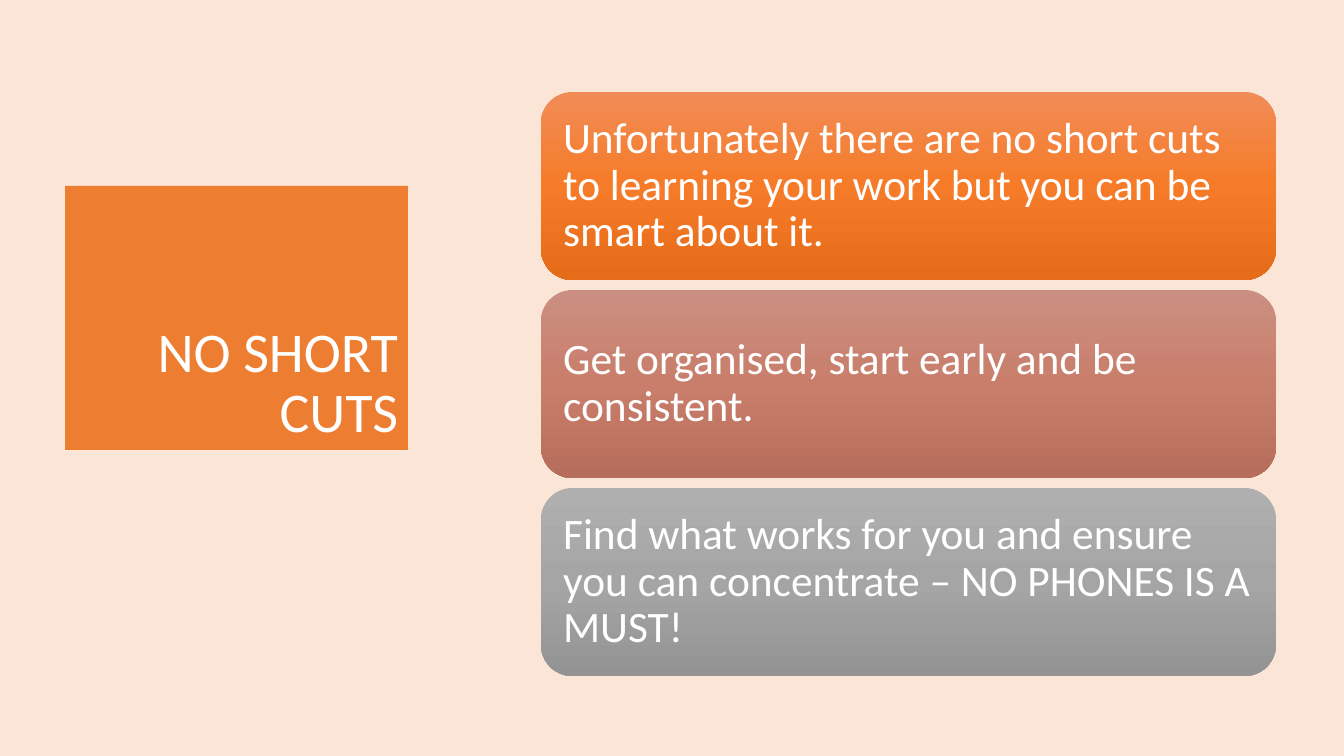
from copy import deepcopy

from pptx import Presentation
from pptx.dml.color import RGBColor
from pptx.enum.shapes import MSO_SHAPE
from pptx.enum.text import MSO_ANCHOR, PP_ALIGN
from pptx.util import Pt

PX = 914400 / 100.8
WHITE, ORANGE, PEACH = "FFFFFF", "ED7D31", "FBE5D6"

TITLE = "NO SHORT CUTS"
TIPS = [
    ("Unfortunately there are no short cuts to learning your work but you can be smart about it.",
     ["F18C57", "F67B28", "E56C19"]),
    ("Get organised, start early and be consistent.",
     ["CB8F81", "C97E6B", "B76D5B"]),
    ("Find what works for you and ensure you can concentrate – NO PHONES IS A MUST!",
     ["AFAFAF", "A5A5A5", "939393"]),
]
TIP_LEFT, TIP_TOP, TIP_WIDTH, TIP_HEIGHT, TIP_GAP = 541, 92, 735, 188, 10


def rgb(value):
    return RGBColor.from_string(value)


def add_panel(kind, box, text, size, align, anchor, insets):
    """Add an unlined shape with white text; box and (x, y) insets are in px."""
    panel = slide.shapes.add_shape(kind, *(round(n * PX) for n in box))
    panel.shadow.inherit = False
    panel.line.fill.background()
    frame = panel.text_frame
    inset_x, inset_y = (round(n * PX) for n in insets)
    layout = {"word_wrap": True, "vertical_anchor": anchor,
              "margin_left": inset_x, "margin_right": inset_x,
              "margin_top": inset_y, "margin_bottom": inset_y}
    for name, value in layout.items():
        setattr(frame, name, value)
    paragraph = frame.paragraphs[0]
    paragraph.alignment = align
    paragraph.line_spacing = 0.9
    run = paragraph.add_run()
    run.text = text
    for name, value in {"name": "Calibri", "size": Pt(size)}.items():
        setattr(run.font, name, value)
    run.font.color.rgb = rgb(WHITE)
    return panel


deck = Presentation()
deck.slide_width, deck.slide_height = round(1344 * PX), round(756 * PX)
slide = deck.slides.add_slide(deck.slide_layouts[6])
slide.background.fill.solid()
slide.background.fill.fore_color.rgb = rgb(PEACH)

title = add_panel(MSO_SHAPE.RECTANGLE, (65, 186, 343, 264), TITLE, 40,
                  PP_ALIGN.RIGHT, MSO_ANCHOR.BOTTOM, (10, 5))
title.fill.solid()
title.fill.fore_color.rgb = rgb(ORANGE)

for row, (tip, shades) in enumerate(TIPS):
    top = TIP_TOP + row * (TIP_HEIGHT + TIP_GAP)
    card = add_panel(MSO_SHAPE.ROUNDED_RECTANGLE, (TIP_LEFT, top, TIP_WIDTH, TIP_HEIGHT),
                     tip, 31, PP_ALIGN.LEFT, MSO_ANCHOR.MIDDLE, (13, 13))
    card.fill.gradient()
    card.fill.gradient_angle = 270
    # A new gradient has two stops; the middle shade needs a third
    stop_list = card.fill._fill._gradFill.gsLst
    stop_list.insert(1, deepcopy(stop_list[0]))
    for stop, position, shade in zip(card.fill.gradient_stops, (0, 0.5, 1), shades):
        stop.position = position
        stop.color.rgb = rgb(shade)

deck.save("out.pptx")
